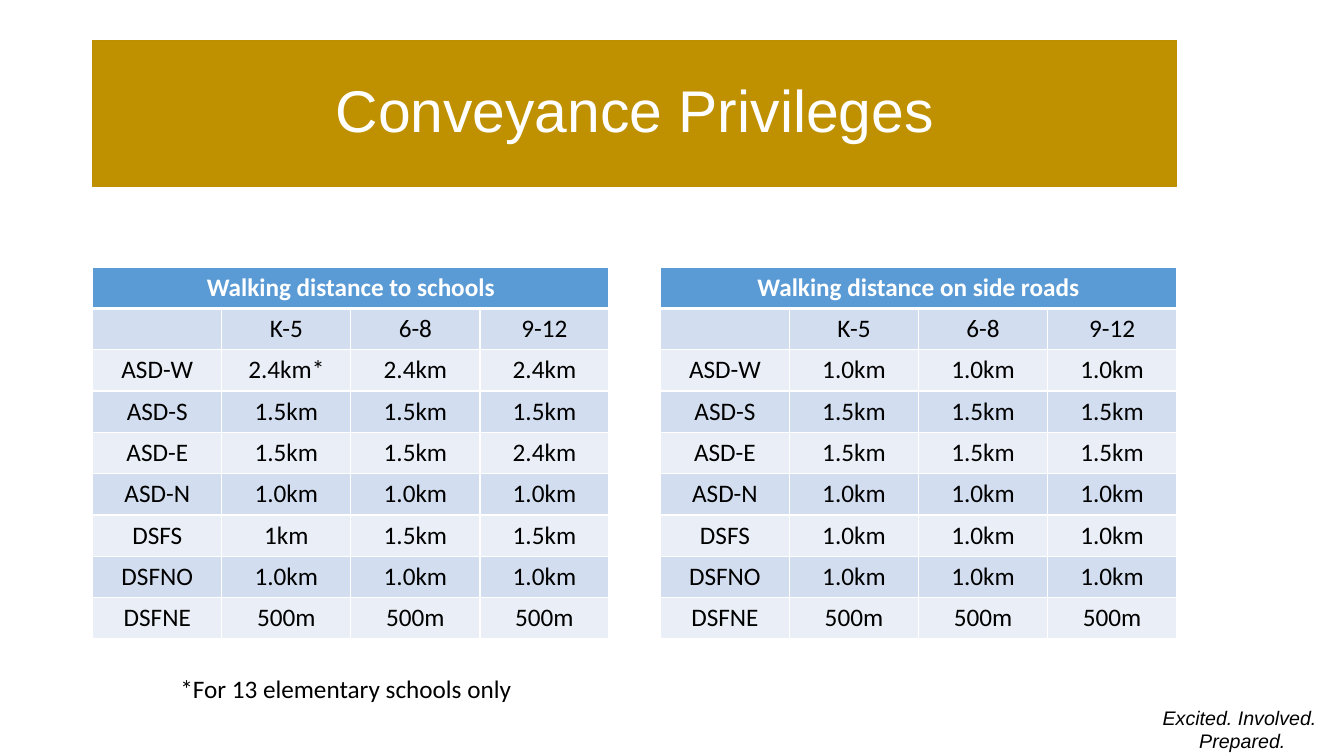
from dataclasses import dataclass

from lxml.etree import SubElement
from pptx import Presentation
from pptx.dml.color import RGBColor
from pptx.enum.shapes import MSO_SHAPE
from pptx.enum.text import MSO_ANCHOR, PP_ALIGN
from pptx.oxml.ns import qn
from pptx.slide import Slide
from pptx.table import _Cell
from pptx.text.text import _Paragraph
from pptx.util import Inches, Pt


@dataclass(frozen=True)
class Theme:
    gold: str = "BF9000"
    edge: str = "BD8E00"
    head: str = "5B9BD5"
    dark: str = "D2DEEF"
    pale: str = "EAEFF7"
    white: str = "FFFFFF"
    black: str = "000000"
    sans: str = "Arial"
    body: str = "Calibri"
    title: int = 42
    text: int = 18
    small: int = 14
    thin: float = 1
    thick: float = 3


@dataclass(frozen=True)
class Grid:
    left: float
    title: str
    rows: dict[str, str]


THEME = Theme()
TOP, COL, ROW = 2.65, 1.28, 0.41
GRADES = ["", "K-5", "6-8", "9-12"]
GRIDS = [
    Grid(0.92, "Walking distance to schools", {
        "ASD-W": "2.4km* 2.4km 2.4km",
        "ASD-S": "1.5km 1.5km 1.5km",
        "ASD-E": "1.5km 1.5km 2.4km",
        "ASD-N": "1.0km 1.0km 1.0km",
        "DSFS": "1km 1.5km 1.5km",
        "DSFNO": "1.0km 1.0km 1.0km",
        "DSFNE": "500m 500m 500m",
    }),
    Grid(6.55, "Walking distance on side roads", {
        "ASD-W": "1.0km 1.0km 1.0km",
        "ASD-S": "1.5km 1.5km 1.5km",
        "ASD-E": "1.5km 1.5km 1.5km",
        "ASD-N": "1.0km 1.0km 1.0km",
        "DSFS": "1.0km 1.0km 1.0km",
        "DSFNO": "1.0km 1.0km 1.0km",
        "DSFNE": "500m 500m 500m",
    }),
]


def add_run(para: _Paragraph, text: str, size: int, face: str, color: str,
            bold: bool = False, italic: bool = False) -> None:
    run = para.add_run()
    run.text = text
    font = run.font
    font.size, font.name = Pt(size), face
    font.bold, font.italic = bold, italic
    font.color.rgb = RGBColor.from_string(color)


def add_text(slide: Slide, box: tuple[float, float, float, float]) -> _Paragraph:
    frame = slide.shapes.add_textbox(*map(Inches, box)).text_frame
    frame.word_wrap = True
    return frame.paragraphs[0]


def add_title(slide: Slide, text: str) -> None:
    box = map(Inches, (0.92, 0.4, 10.75, 1.45))
    bar = slide.shapes.add_shape(MSO_SHAPE.RECTANGLE, *box)
    bar.shadow.inherit = False
    bar.fill.solid()
    bar.fill.fore_color.rgb = RGBColor.from_string(THEME.gold)
    bar.line.color.rgb = RGBColor.from_string(THEME.edge)
    bar.line.width = Pt(THEME.thin)
    bar.text_frame.vertical_anchor = MSO_ANCHOR.MIDDLE
    para = bar.text_frame.paragraphs[0]
    para.alignment = PP_ALIGN.CENTER
    para.line_spacing = 0.9
    add_run(para, text, THEME.title, THEME.sans, THEME.white)


def style_cell(cell: _Cell, fill: str, above: float, below: float) -> None:
    # Borders come before the fill in the cell properties
    props = cell._tc.get_or_add_tcPr()
    sides = {"L": THEME.thin, "R": THEME.thin, "T": above, "B": below}
    for side, width in sides.items():
        line = SubElement(props, qn(f"a:ln{side}"), w=str(Pt(width)))
        solid = SubElement(line, qn("a:solidFill"))
        SubElement(solid, qn("a:srgbClr"), val=THEME.white)
    cell.fill.solid()
    cell.fill.fore_color.rgb = RGBColor.from_string(fill)


def add_grid(slide: Slide, grid: Grid) -> None:
    rows = [[grid.title, "", "", ""], GRADES]
    rows += [[name, *values.split()] for name, values in grid.rows.items()]
    count, width = len(rows), len(GRADES)
    table = slide.shapes.add_table(
        count, width, Inches(grid.left), Inches(TOP),
        Inches(COL * width), Inches(ROW * count)).table
    for col in table.columns:
        col.width = Inches(COL)
    for r, row in enumerate(rows):
        table.rows[r].height = Inches(ROW)
        top = r == 0
        fill = THEME.head if top else THEME.dark if r % 2 else THEME.pale
        above = THEME.thick if r == 1 else THEME.thin
        below = THEME.thick if top else THEME.thin
        for c, text in enumerate(row):
            cell = table.cell(r, c)
            style_cell(cell, fill, above, below)
            if text:
                para = cell.text_frame.paragraphs[0]
                para.alignment = PP_ALIGN.CENTER
                color = THEME.white if top else THEME.black
                add_run(para, text, THEME.text, THEME.body, color, bold=top)
    table.cell(0, 0).merge(table.cell(0, width - 1))


def main() -> None:
    deck = Presentation()
    deck.slide_width, deck.slide_height = Inches(13.33), Inches(7.5)
    slide = deck.slides.add_slide(deck.slide_layouts[6])

    # Motto in the corner
    motto = add_text(slide, (11.02, 6.95, 2.55, 0.57))
    motto.alignment = PP_ALIGN.CENTER
    add_run(motto, "Excited. Involved.", THEME.small, THEME.sans,
            THEME.black, italic=True)
    motto.add_line_break()
    add_run(motto, " Prepared.", THEME.small, THEME.sans,
            THEME.black, italic=True)

    # Title and distance tables
    add_title(slide, "Conveyance Privileges")
    for grid in GRIDS:
        add_grid(slide, grid)

    # Footnote
    note = add_text(slide, (1.69, 6.63, 4.24, 0.4))
    add_run(note, "*For 13 elementary schools only", THEME.text,
            THEME.body, THEME.black)

    deck.save("out.pptx")


if __name__ == "__main__":
    main()
